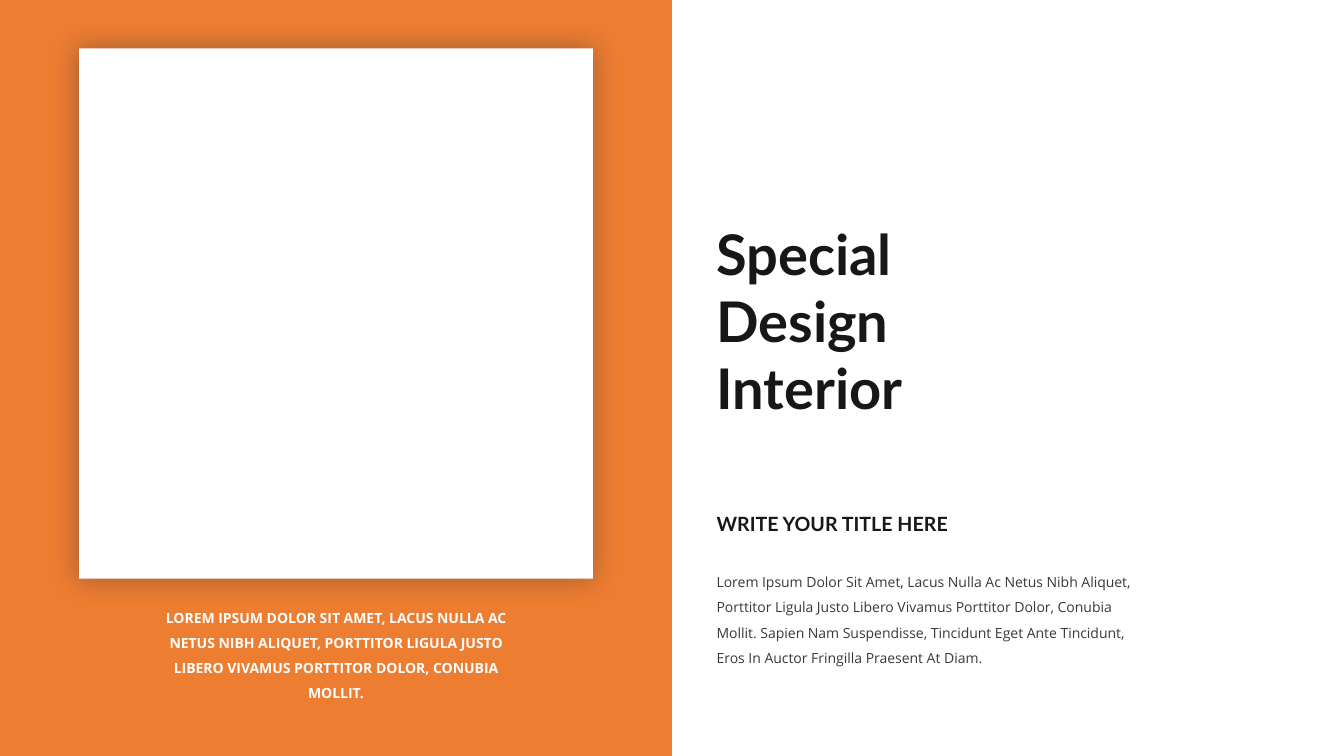
from lxml import etree
from pptx import Presentation
from pptx import util as u
from pptx.dml.color import RGBColor
from pptx.enum import shapes, text
from pptx.oxml import ns

# Colours
ORANGE = RGBColor(0xED, 0x7D, 0x31)
WHITE = RGBColor(0xFF, 0xFF, 0xFF)
INK = RGBColor(0x18, 0x17, 0x17)
GREY = RGBColor(0x3B, 0x38, 0x38)
SHADE = RGBColor(0x28, 0x2B, 0x31)

# Content: wording, font, size, bold, colour, line spacing
CAPTION = ("LOREM IPSUM DOLOR SIT AMET, LACUS NULLA AC NETUS NIBH ALIQUET, "
           "PORTTITOR LIGULA JUSTO LIBERO VIVAMUS PORTTITOR DOLOR, CONUBIA MOLLIT.",
           "Open Sans", 10, True, WHITE, 1.5)
HEADLINE = ("Special Design Interior", "Lato", 40, True, INK, None)
SUBTITLE = ("WRITE YOUR TITLE HERE", "Lato", 14, True, INK, None)
BODY = ("Lorem Ipsum Dolor Sit Amet, Lacus Nulla Ac Netus Nibh Aliquet, "
        "Porttitor Ligula Justo Libero Vivamus Porttitor Dolor, Conubia Mollit. "
        "Sapien Nam Suspendisse, Tincidunt Eget Ante Tincidunt, "
        "Eros In Auctor Fringilla Praesent At Diam.",
        "Open Sans", 10, False, GREY, 1.5)

# Layout in centimetres
SLIDE_W, SLIDE_H = 33.87, 19.05
PANEL_W = SLIDE_W / 2
FRAME_W, FRAME_H, FRAME_TOP = 12.95, 13.36, 1.22
CAPTION_W = 10.03
COLUMN_LEFT = 17.81

deck = Presentation()
deck.slide_width, deck.slide_height = u.Cm(SLIDE_W), u.Cm(SLIDE_H)
slide = deck.slides.add_slide(deck.slide_layouts[6])


def add_block(left, top, width, height, colour):
    block = slide.shapes.add_shape(shapes.MSO_SHAPE.RECTANGLE, u.Cm(left),
                                   u.Cm(top), u.Cm(width), u.Cm(height))
    block.shadow.inherit = False
    block.fill.solid()
    block.fill.fore_color.rgb = colour
    block.line.fill.background()
    return block


def add_glow_shadow(block, colour, blur, opacity):
    effects = block._element.spPr.find(ns.qn("a:effectLst"))
    shadow = etree.SubElement(effects, ns.qn("a:outerShdw"),
                              blurRad=str(u.Pt(blur)), algn="ctr", rotWithShape="0")
    tint = etree.SubElement(shadow, ns.qn("a:srgbClr"), val=str(colour))
    etree.SubElement(tint, ns.qn("a:alpha"), val=str(opacity * 1000))


def add_words(content, left, top, width, height, align=text.PP_ALIGN.LEFT):
    wording, font, size, bold, colour, spacing = content
    frame = slide.shapes.add_textbox(u.Cm(left), u.Cm(top),
                                     u.Cm(width), u.Cm(height)).text_frame
    frame.word_wrap = True
    frame.auto_size = text.MSO_AUTO_SIZE.SHAPE_TO_FIT_TEXT
    paragraph = frame.paragraphs[0]
    paragraph.alignment = align
    paragraph.line_spacing = spacing
    run = paragraph.add_run()
    run.text = wording
    run.font.name, run.font.size, run.font.bold = font, u.Pt(size), bold
    run.font.color.rgb = colour


# Left half: panel, framed area and caption, all centred on the panel
add_block(0, 0, PANEL_W, SLIDE_H, ORANGE)
frame_area = add_block((PANEL_W - FRAME_W) / 2, FRAME_TOP, FRAME_W, FRAME_H, WHITE)
add_glow_shadow(frame_area, SHADE, 20, 40)
add_words(CAPTION, (PANEL_W - CAPTION_W) / 2, 15.01, CAPTION_W, 2.82,
          text.PP_ALIGN.CENTER)

# Right half: text column
add_words(HEADLINE, COLUMN_LEFT, 5.41, 5.97, 5.38)
add_words(SUBTITLE, COLUMN_LEFT, 12.78, 7.16, 0.86)
add_words(BODY, COLUMN_LEFT, 14.12, 11.46, 2.82)

deck.save("out.pptx")
